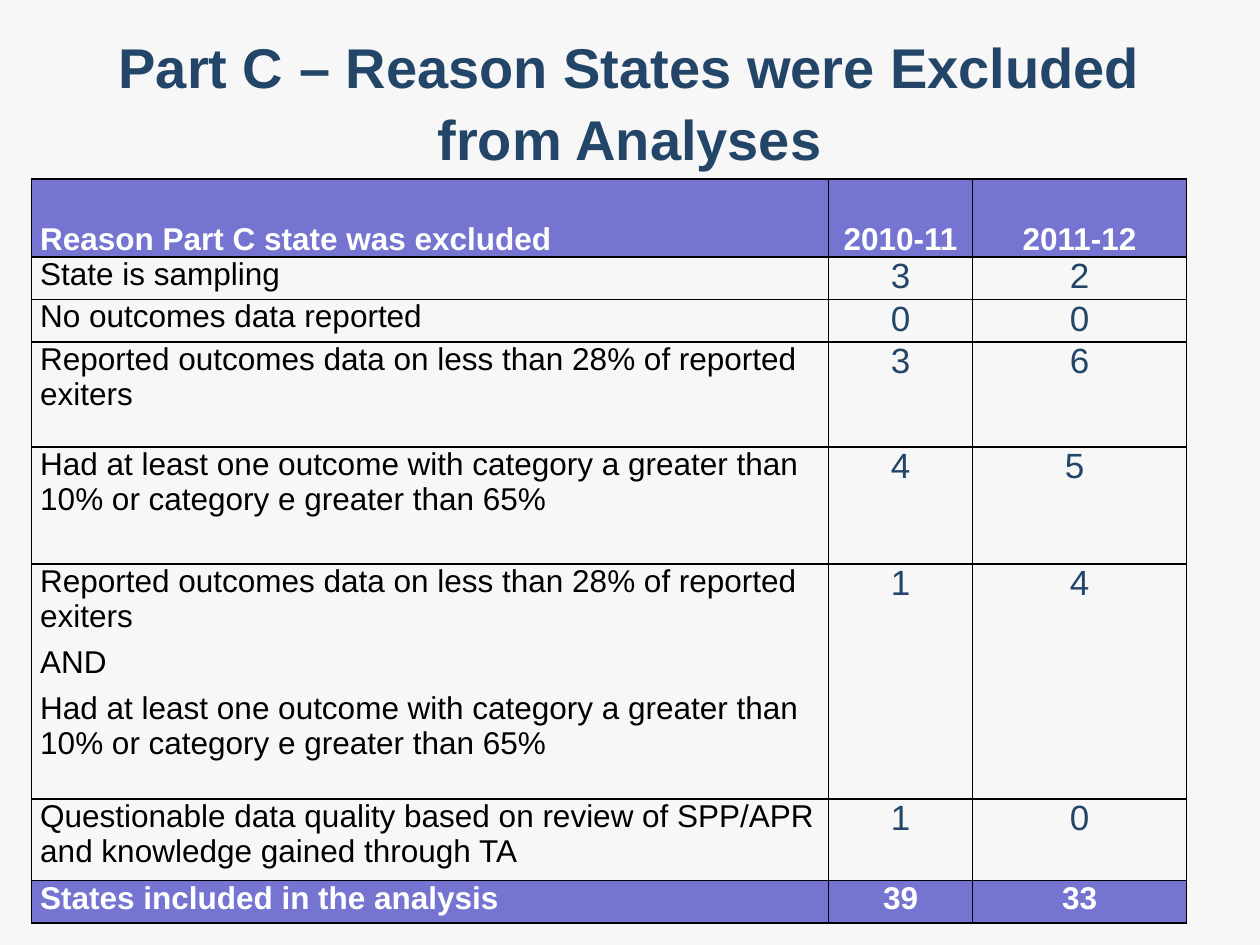
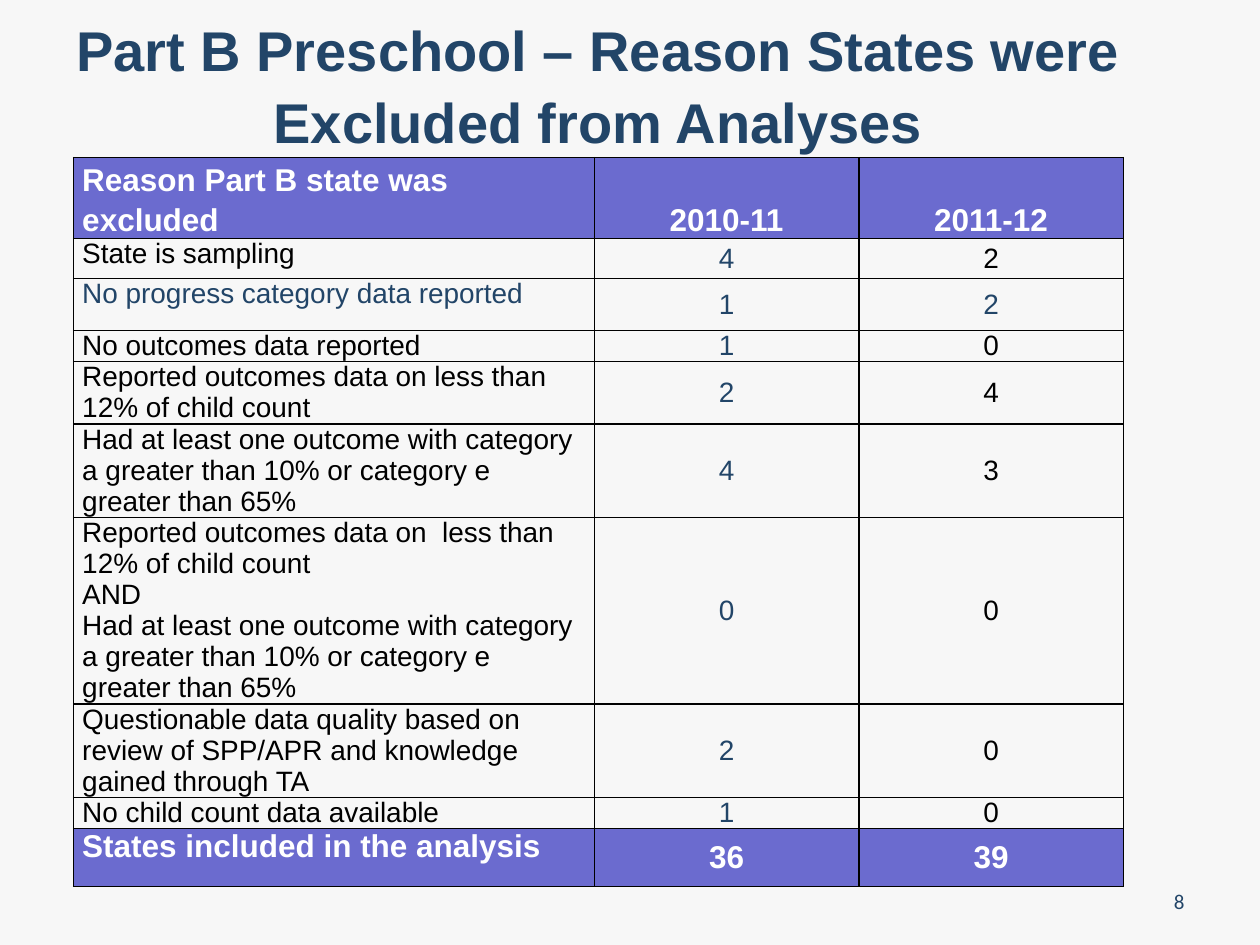
from pptx import Presentation
from pptx.dml.color import RGBColor
from pptx.enum.text import MSO_ANCHOR as Anchor, MSO_AUTO_SIZE as AutoSize, PP_ALIGN as Align
from pptx.oxml import parse_xml
from pptx.oxml.ns import nsdecls
from pptx.util import Pt

NAVY = RGBColor(0x22, 0x45, 0x68)
BLACK = RGBColor(0x00, 0x00, 0x00)
WHITE = RGBColor(0xFF, 0xFF, 0xFF)
PALE_GRAY = RGBColor(0xF7, 0xF7, 0xF7)
PERIWINKLE = RGBColor(0x75, 0x75, 0xD1)
SLATE_BLUE = RGBColor(0x6B, 0x6B, 0xCF)

TITLE_ONLY = 5
YEARS = ["2010-11", "2011-12"]
HIGH_CATEGORY = "Had at least one outcome with category a greater than 10% or category e greater than 65%"
QUESTIONABLE = "Questionable data quality based on review of SPP/APR and knowledge gained through TA"
LOW_EXITERS = "Reported outcomes data on less than 28% of reported exiters"
INCLUDED = "States included in the analysis"


def set_values(target, values):
    for name, value in values.items():
        setattr(target, name, value)


class Deck:
    title_font = {"name": "Arial", "size": Pt(32), "bold": True}
    number_font = {"name": "Calibri", "size": Pt(12), "bold": False}
    band_font = {"name": "Arial", "size": Pt(18), "bold": True}
    title_frame = {"word_wrap": True, "auto_size": AutoSize.NONE, "vertical_anchor": Anchor.MIDDLE}
    cell_frame = {"margin_left": Pt(5), "margin_right": Pt(5), "margin_top": 0, "margin_bottom": 0}

    def __init__(self):
        self.presentation = Presentation()
        self.presentation.slide_width = Pt(720)
        self.presentation.slide_height = Pt(540)
        background = self.presentation.slide_master.background.fill
        background.solid()
        background.fore_color.rgb = PALE_GRAY
        self.slide = None

    def add_text(self, frame, lines, font, color, align=Align.LEFT, spacing=1.0, gap=0):
        for index, line in enumerate(lines):
            paragraph = frame.paragraphs[0] if index == 0 else frame.add_paragraph()
            paragraph.text = line
            set_values(paragraph, {
                "alignment": align,
                "line_spacing": spacing,
                "space_before": Pt(gap if index else 0),
                "space_after": Pt(0),
            })
            set_values(paragraph.font, font)
            paragraph.font.color.rgb = color

    def add_slide(self, title, left, top):
        layout = self.presentation.slide_layouts[TITLE_ONLY]
        self.slide = self.presentation.slides.add_slide(layout)
        shape = self.slide.shapes.title
        set_values(shape, {"left": Pt(left), "top": Pt(top), "width": Pt(636), "height": Pt(90)})
        set_values(shape.text_frame, self.title_frame)
        self.add_text(shape.text_frame, [title], self.title_font, NAVY, Align.CENTER, 1.07)

    def add_slide_number(self, number):
        shape = self.slide.shapes.add_textbox(Pt(516), Pt(500.5), Pt(168), Pt(28.8))
        set_values(shape.text_frame, self.title_frame)
        self.add_text(shape.text_frame, [number], self.number_font, NAVY, Align.RIGHT)

    def add_borders(self, cell):
        properties = cell._tc.get_or_add_tcPr()
        for side in "LRTB":
            properties.append(parse_xml(
                f'<a:ln{side} {nsdecls("a")} w="12700"><a:solidFill>'
                f'<a:srgbClr val="{BLACK}"/></a:solidFill></a:ln{side}>'))

    def add_cell(self, cell, lines, anchor, fill, **text):
        set_values(cell, self.cell_frame)
        cell.vertical_anchor = anchor
        self.add_borders(cell)
        if fill is None:
            cell.fill.background()
        else:
            cell.fill.solid()
            cell.fill.fore_color.rgb = fill
        self.add_text(cell.text_frame, lines, **text)

    def add_reason_table(self, left, top, widths, heights, header, reasons, totals,
                         band_color, reason_size, count_size, count_anchor, gap):
        frame = self.slide.shapes.add_table(
            len(heights), len(widths), Pt(left), Pt(top), Pt(sum(widths)), Pt(sum(heights)))
        table = frame.table
        table.first_row = table.horz_banding = False
        for column, width in zip(table.columns, widths):
            column.width = Pt(width)
        for row, height in zip(table.rows, heights):
            row.height = Pt(height)

        last = len(heights) - 1
        plain = (BLACK, BLACK, BLACK)
        rows = [([header], YEARS, plain), *reasons, ([INCLUDED], totals, plain)]
        for row_index, (lines, counts, colors) in enumerate(rows):
            band = row_index in (0, last)
            for column_index, content in enumerate([lines, *([count] for count in counts)]):
                is_count = column_index > 0
                size = count_size if is_count else reason_size
                if row_index == 0:
                    anchor = Anchor.BOTTOM
                else:
                    anchor = count_anchor if is_count else Anchor.TOP
                self.add_cell(
                    table.cell(row_index, column_index), content, anchor,
                    band_color if band else None,
                    font=self.band_font if band else {"name": "Arial", "size": Pt(size), "bold": False},
                    color=WHITE if band else colors[column_index],
                    align=Align.CENTER if is_count else Align.LEFT,
                    spacing=1.15 if row_index == 0 and not is_count else 1.0,
                    gap=gap)


def add_part_c(deck):
    colors = (BLACK, NAVY, NAVY)
    reasons = [
        (["State is sampling"], "32"),
        (["No outcomes data reported"], "00"),
        ([LOW_EXITERS], "36"),
        ([HIGH_CATEGORY], ["4", "5 "]),
        ([LOW_EXITERS, "AND", HIGH_CATEGORY], "14"),
        ([QUESTIONABLE], "10"),
    ]
    deck.add_slide("Part C – Reason States were Excluded from Analyses", 41.8, 12.2)
    deck.add_reason_table(
        18, 102.2, [455.5, 82.2, 122.4], [44.6, 24.3, 24.3, 60, 67, 134.3, 46.6, 24.3],
        "Reason Part C state was excluded",
        [(lines, counts, colors) for lines, counts in reasons],
        ["39", "33"], PERIWINKLE, 18, 20, Anchor.TOP, 6)


def add_part_b(deck):
    colors = (BLACK, NAVY, BLACK)
    reasons = [
        (["State is sampling"], "42", colors),
        (["No progress category data reported"], "12", (NAVY, NAVY, NAVY)),
        (["No outcomes data reported"], "10", colors),
        (["Reported outcomes data on less than 12% of child count"], "24", colors),
        ([HIGH_CATEGORY], "43", colors),
        (["Reported outcomes data on  less than 12% of child count", "AND", HIGH_CATEGORY], "00", colors),
        ([QUESTIONABLE], "20", colors),
        (["No child count data available"], "10", colors),
    ]
    deck.add_slide("Part B Preschool – Reason States were Excluded from Analyses", 23.8, 2.2)
    deck.add_slide_number("8")
    deck.add_reason_table(
        42, 90, [297.6, 151.2, 151.2],
        [46.3, 22.8, 29.7, 17.8, 35.5, 53.4, 106.6, 53.4, 17.8, 33.3],
        "Reason Part B state was excluded", reasons,
        ["36", "39"], SLATE_BLUE, 16, 16, Anchor.MIDDLE, 0)


def main():
    deck = Deck()
    add_part_c(deck)
    add_part_b(deck)
    deck.presentation.save("out.pptx")


if __name__ == "__main__":
    main()
